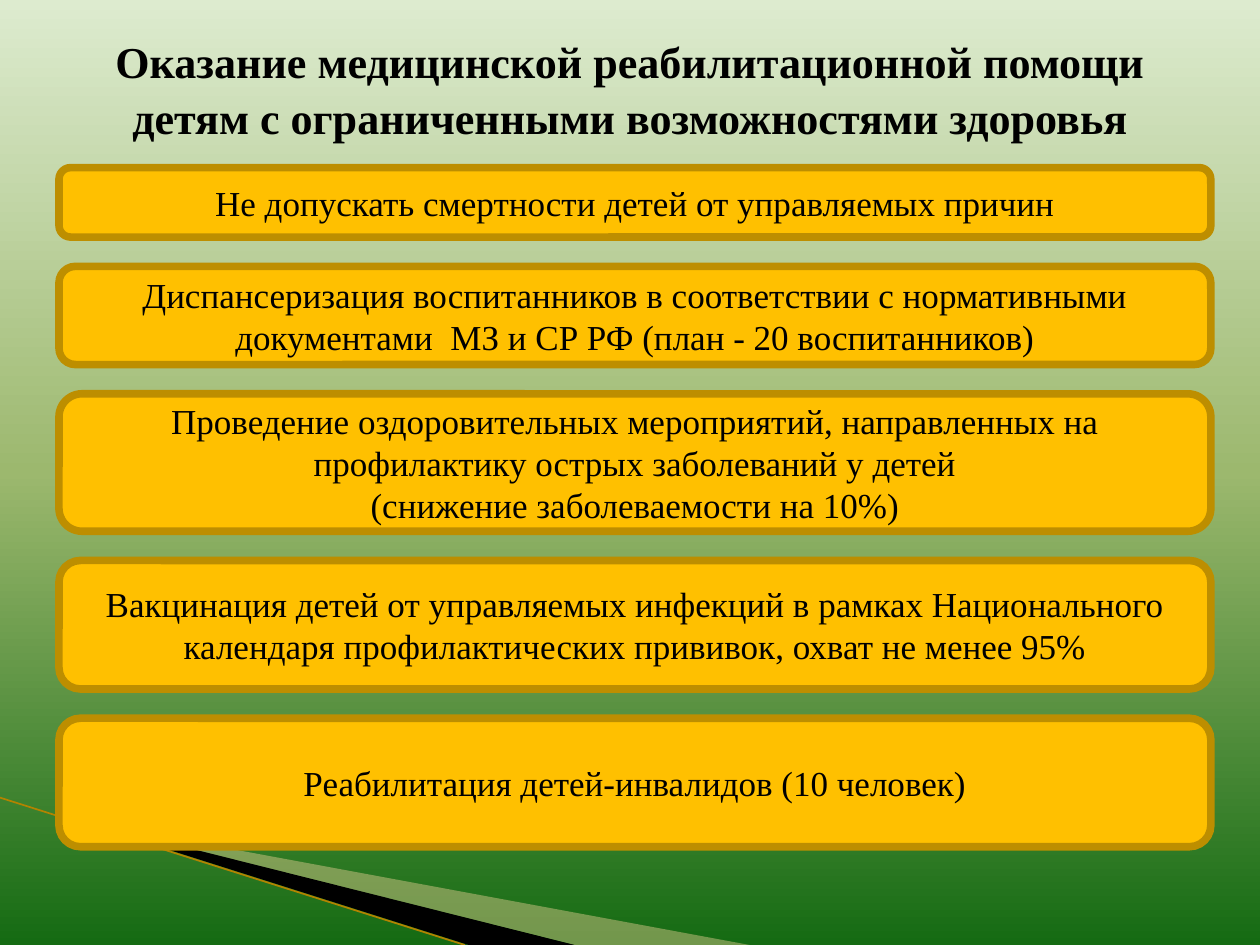
from copy import deepcopy
from dataclasses import dataclass

from lxml import etree
from pptx import Presentation
from pptx import util as u
from pptx.dml import color
from pptx.enum import shapes, text
from pptx.oxml import ns

FONT = "Times New Roman"
CARD_LEFT, CARD_TOP, CARD_WIDTH, CARD_GAP = 1.19, 3.38, 23.22, 0.59


@dataclass
class Card:
    height: float
    lines: list[str]


@dataclass
class Wedge:
    points: list[tuple[float, float]]
    fill: str
    opacity: int = 100


CARDS = [
    Card(1.4, ["Не допускать смертности детей от управляемых причин"]),
    Card(1.98, ["Диспансеризация воспитанников в соответствии с нормативными "
                "документами  МЗ и СР РФ (план - 20 воспитанников)"]),
    Card(2.77, ["Проведение оздоровительных мероприятий, направленных на "
                "профилактику острых заболеваний у детей",
                "(снижение заболеваемости на 10%)"]),
    Card(2.59, ["Вакцинация детей от управляемых инфекций в рамках Национального "
                "календаря профилактических прививок, охват не менее 95%"]),
    Card(2.59, ["Реабилитация детей-инвалидов (10 человек)"]),
]
WEDGES = [
    Wedge([(1.4, 16.51), (15.11, 19.05), (11.58, 19.05)], "FFD9A2", 40),
    Wedge([(1.35, 16.48), (11.58, 19.05), (9.45, 19.05)], "000000"),
]
BACKGROUND = [(0, "DDEBCF"), (0.5, "9CB86E"), (1, "156B13")]


def rgb(value: str) -> color.RGBColor:
    return color.RGBColor.from_string(value)


def write(shape, lines: list[str], **formats) -> None:
    frame = shape.text_frame
    frame.word_wrap = True
    frame.auto_size = text.MSO_AUTO_SIZE.NONE
    frame.vertical_anchor = text.MSO_ANCHOR.MIDDLE
    for index, line in enumerate(lines):
        para = frame.add_paragraph() if index else frame.paragraphs[0]
        para.alignment = text.PP_ALIGN.CENTER
        span = para.add_run()
        span.text = line
        for name, value in formats.items():
            setattr(span.font, name, value)
        span.font.color.rgb = rgb("000000")


def paint_background(page) -> None:
    fill = page.background.fill
    fill.gradient()
    fill.gradient_angle = 270
    stop_list = page._element.find(".//" + ns.qn("a:gsLst"))
    stop_list.append(deepcopy(stop_list[0]))
    for stop, (position, value) in zip(fill.gradient_stops, BACKGROUND):
        stop.position = position
        stop.color.rgb = rgb(value)


def draw_wedge(page, wedge: Wedge) -> None:
    start, *rest = [(u.Cm(x), u.Cm(y)) for x, y in wedge.points]
    builder = page.shapes.build_freeform(*start)
    builder.add_line_segments(rest, close=True)
    shape = builder.convert_to_shape()
    shape.shadow.inherit = False
    shape.line.fill.background()
    shape.fill.solid()
    shape.fill.fore_color.rgb = rgb(wedge.fill)
    if wedge.opacity < 100:
        tint = shape._element.spPr.find(".//" + ns.qn("a:srgbClr"))
        etree.SubElement(tint, ns.qn("a:alpha"), val=str(wedge.opacity * 1000))


def draw_edge(page) -> None:
    edge = page.shapes.add_connector(
        shapes.MSO_CONNECTOR.STRAIGHT, u.Cm(0), u.Cm(16.08), u.Cm(9.37), u.Cm(19.05))
    edge.line.color.rgb = rgb("B38300")
    edge.line.width = u.Pt(0.95)
    etree.SubElement(edge._element.spPr, ns.qn("a:effectLst"))


def draw_card(page, card: Card, top: float) -> None:
    box = page.shapes.add_shape(
        shapes.MSO_SHAPE.ROUNDED_RECTANGLE,
        u.Cm(CARD_LEFT), u.Cm(top), u.Cm(CARD_WIDTH), u.Cm(card.height))
    box.shadow.inherit = False
    box.fill.solid()
    box.fill.fore_color.rgb = rgb("FFC000")
    box.line.color.rgb = rgb("BD8E00")
    box.line.width = u.Pt(4.33)
    write(box, card.lines, name=FONT, size=u.Pt(20))


def main() -> None:
    deck = Presentation()
    deck.slide_width, deck.slide_height = u.Cm(25.4), u.Cm(19.05)
    page = deck.slides.add_slide(deck.slide_layouts[5])
    paint_background(page)

    title = page.shapes.title
    place = {"left": 1.27, "top": 0.76, "width": 22.86, "height": 2.01}
    for name, value in place.items():
        setattr(title, name, u.Cm(value))
    write(title, ["Оказание медицинской реабилитационной помощи "
                  "детям с ограниченными возможностями здоровья"],
          name=FONT, size=u.Pt(25.2), bold=True)
    title.text_frame.paragraphs[0].line_spacing = 1.05

    for wedge in WEDGES:
        draw_wedge(page, wedge)
    draw_edge(page)

    top = CARD_TOP
    for card in CARDS:
        draw_card(page, card, top)
        top += card.height + CARD_GAP

    deck.save("out.pptx")


if __name__ == "__main__":
    main()
